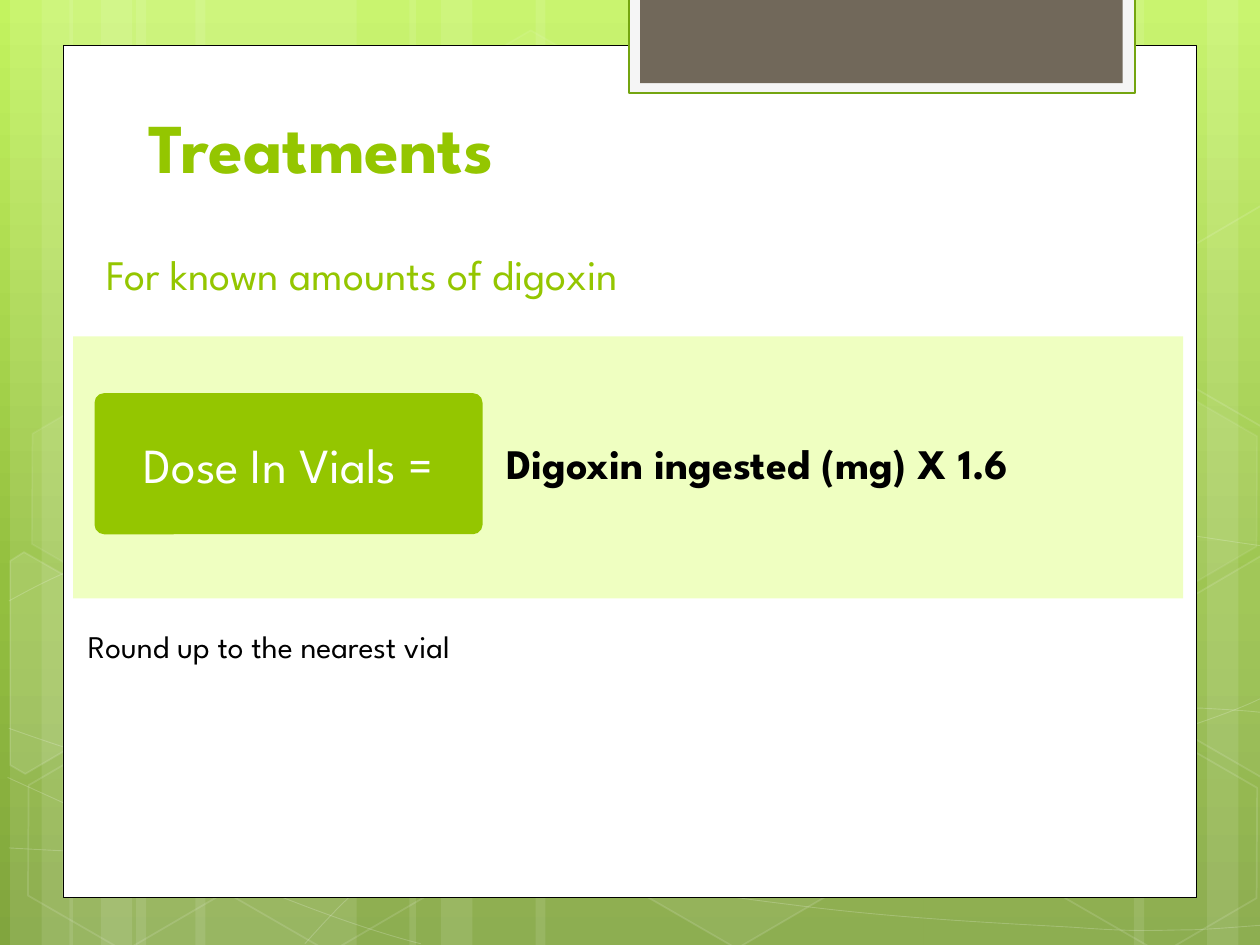
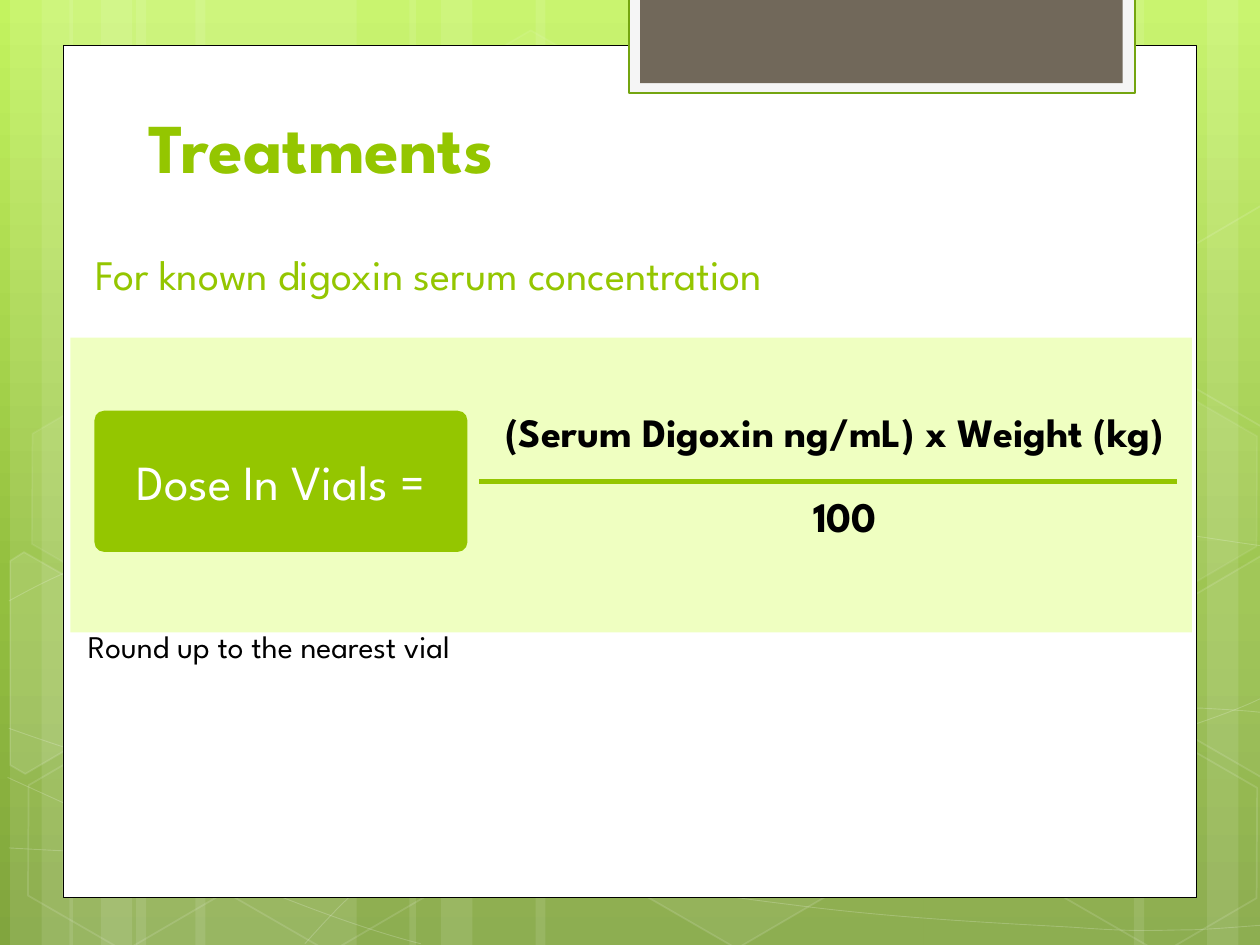
from copy import deepcopy
from math import cos, radians, sin
from pptx import Presentation
from pptx import util as u
from pptx.dml.color import RGBColor
from pptx.enum import shapes, text
from pptx.oxml.ns import qn
from pptx.oxml.xmlchemy import OxmlElement

UNIT = 2.54  # one layout unit in centimetres
TILT = 30  # turn of the hexagons, in degrees
FONT = "League Spartan"
HEX = {"white": "FFFFFF", "black": "000000", "green": "94C600",
       "pale": "EFFFC1", "rim": "74A510", "tab": "71685A",
       "frame": "F5F5F5"}
SKY = [(0, "C3F35F"), (0.62, "93BF3F"), (1, "81A53E")]

KIND = shapes.MSO_SHAPE
ALIGN = text.PP_ALIGN
MID = text.MSO_ANCHOR.MIDDLE

# Each formula part: text, box, format
SLIDES = [
    {"lead": ("For known amounts of digoxin", (0.75, 1.92, 7.5, 0.5)),
     "band": (0.58, 2.67, 8.81, 2.08),
     "dose": (0.75, 3.12, 3.08, 1.12),
     "parts": [("Digoxin ingested (mg) X 1.6", (3.92, 3.33, 5.33, 0.74),
                {"size": 24})]},
    {"lead": ("For known digoxin serum concentration",
              (0.66, 1.92, 8.84, 0.5)),
     "band": (0.56, 2.68, 8.9, 2.34),
     "dose": (0.75, 3.26, 2.96, 1.12),
     "parts": [("(Serum Digoxin ng/mL) x Weight (kg)",
                (3.58, 3.08, 6.1, 0.74),
                {"size": 23, "align": ALIGN.CENTER}),
               ("100", (4.07, 3.75, 5.27, 0.74),
                {"size": 24, "align": ALIGN.CENTER})],
     "bar": (3.8, 3.82, 9.34, 3.82)},
]

# Stripes: left, width
STRIPES = [(1.08, 1.75), (0.08, 0.5), (0.33, 0.83), (1.55, 1.75),
           (0.55, 0.5), (0.8, 0.83), (7.33, 1.75), (9.58, 0.5),
           (9, 0.83), (4.25, 3.08), (3.25, 0.5), (3.5, 0.83)]

# Curves: a start, then two handles and an end for each bend
CURVES = [
    [(0.07, 6.73), (0.61, 6.76), (1.15, 6.79), (1.9, 6.78),
     (2.65, 6.77), (3.58, 6.75), (4.58, 6.65),
     (5.58, 6.55), (7, 6.36), (7.92, 6.17),
     (8.83, 5.98), (9.77, 5.68), (10.07, 5.51)],
    [(0.07, 4.77), (0.36, 4.61), (0.65, 4.46), (1.21, 4.31),
     (1.78, 4.16), (2.59, 3.94), (3.47, 3.87),
     (4.36, 3.8), (5.44, 3.79), (6.54, 3.87),
     (7.64, 3.95), (9.47, 4.26), (10.07, 4.34)],
    [(0.06, 6.17), (1.27, 6.72), (2.47, 7.27), (3.34, 7.49)],
    [(0.07, 5.78), (0.38, 5.89), (0.7, 6), (1.28, 6.16),
     (1.86, 6.31), (2.73, 6.56), (3.57, 6.73),
     (4.4, 6.9), (5.45, 7.08), (6.28, 7.18),
     (7.11, 7.29), (8, 7.33), (8.53, 7.36),
     (9.05, 7.4), (9.19, 7.38), (9.45, 7.38),
     (9.71, 7.37), (9.89, 7.35), (10.07, 7.34)],
    [(2.42, 7.49), (2.6, 7.29), (2.78, 7.09), (3.02, 6.91),
     (3.26, 6.73), (3.6, 6.53), (3.88, 6.39),
     (4.16, 6.25), (4.33, 6.19), (4.7, 6.09),
     (5.06, 5.99), (5.73, 5.85), (6.08, 5.78),
     (6.44, 5.71), (6.49, 5.71), (6.8, 5.69),
     (7.11, 5.66), (7.6, 5.63), (7.94, 5.62),
     (8.29, 5.61), (8.86, 5.62), (8.86, 5.62),
     (8.86, 5.62), (9.53, 5.62), (9.53, 5.62),
     (9.71, 5.63), (9.88, 5.64), (9.97, 5.65),
     (10.06, 5.66), (10.03, 5.65), (10.06, 5.66)],
]

# Hexagons: left, top, fill opacity, line opacity
CELLS = [(3.34, 0.36, 4, 8), (4.97, 5.89, 6, 12), (0.11, 5.91, 0, 12),
         (0.14, 3.12, 7, 8), (1.74, 5.92, 0, 12), (7.53, 4.53, 10, 12),
         (8.34, 5.93, 0, 12), (8.34, 3.14, 7, 8)]

# Hexagons cut by the slide edge: fill opacity, centre, corners
CUTS = [
    (10, (0.36, 5.35), [(0.08, 4.45), (0.19, 4.38), (0.96, 4.82),
                        (0.95, 5.7), (0.2, 6.14), (0.08, 6.07)]),
    (4, (9.85, 5.2), [(9.26, 4.85), (10.01, 4.41), (10.09, 4.46),
                      (10.09, 6.13), (10.02, 6.17), (9.26, 5.73)]),
    (0, (9.85, 2.41), [(9.26, 2.07), (10.01, 1.63), (10.1, 1.68),
                       (10.09, 3.35), (10.02, 3.39), (9.26, 2.95)]),
]


def rgb(name):
    return RGBColor.from_string(HEX[name])


def dist(vals):
    return [u.Cm(v * UNIT) for v in vals]


def fade(node, alpha):
    """Set the opacity, in percent, of the solid fill under node."""
    tag = OxmlElement("a:alpha")
    tag.set("val", str(alpha * 1000))
    node.find(qn("a:solidFill"))[0].append(tag)


def paint(shp, fill=None, line=None, width=1, see=100, dim=100):
    """Fill and outline; see and dim are their opacities in percent."""
    shp.shadow.inherit = False
    props = shp.element.spPr
    if fill and see:
        shp.fill.solid()
        shp.fill.fore_color.rgb = rgb(fill)
        if see < 100:
            fade(props, see)
    else:
        shp.fill.background()
    if line:
        shp.line.color.rgb = rgb(line)
        shp.line.width = u.Pt(width)
        if dim < 100:
            fade(props.find(qn("a:ln")), dim)
    else:
        shp.line.fill.background()
    return shp


def block(page, box, kind=KIND.RECTANGLE, **look):
    return paint(page.shapes.add_shape(kind, *dist(box)), **look)


def trace(page, pts, close, **look):
    pts = [dist(p) for p in pts]
    pen = page.shapes.build_freeform(*pts[0])
    pen.add_line_segments(pts[1:], close=close)
    return paint(pen.convert_to_shape(), **look)


def bend(shp):
    """Turn each three line segments of a freeform into one cubic curve."""
    legs = list(shp.element.iter(qn("a:lnTo")))
    for i in range(0, len(legs), 3):
        curve = OxmlElement("a:cubicBezTo")
        legs[i].addprevious(curve)
        for leg in legs[i:i + 3]:
            curve.append(leg[0])
            leg.getparent().remove(leg)


def turn(pts, mid):
    """Points turned back by the tilt about mid."""
    c, s = cos(radians(TILT)), sin(radians(TILT))
    gaps = [(x - mid[0], y - mid[1]) for x, y in pts]
    return [(mid[0] + x * c + y * s, mid[1] + y * c - x * s)
            for x, y in gaps]


def write(page, words, box, shp=None, size=24, color="black", bold=False,
          align=ALIGN.LEFT, anchor=text.MSO_ANCHOR.TOP, wrap=True,
          grow=False, space=None):
    shp = shp or page.shapes.add_textbox(*dist(box))
    frame = shp.text_frame
    frame.word_wrap = wrap
    frame.vertical_anchor = anchor
    if grow:
        frame.auto_size = text.MSO_AUTO_SIZE.SHAPE_TO_FIT_TEXT
    para = frame.paragraphs[0]
    para.alignment = align
    para.line_spacing = space
    run = para.add_run()
    run.text = words
    run.font.name, run.font.size, run.font.bold = FONT, u.Pt(size), bold
    run.font.color.rgb = rgb(color)


def backdrop(page):
    fill = page.background.fill
    fill.gradient()
    fill.gradient_angle = 270
    stops = page.element.find(".//" + qn("a:gsLst"))
    stops.append(deepcopy(stops[-1]))
    for stop, (pos, tone) in zip(fill.gradient_stops, SKY):
        stop.position = pos
        stop.color.rgb = RGBColor.from_string(tone)
    for left, wide in STRIPES:
        block(page, (left, 0, wide, 7.5), fill="white", see=10)
    for pts in CURVES:
        bend(trace(page, pts, False, line="white", width=0.5, dim=20))
    for left, top, see, dim in CELLS:
        cell = block(page, (left, top, 1.75, 1.52), KIND.HEXAGON,
                     fill="white", see=see, line="white", dim=dim)
        cell.adjustments[0], cell.adjustments[1] = 0.285, 1.155
        cell.rotation = TILT
    for see, mid, pts in CUTS:
        cut = trace(page, turn(pts, mid), True, fill="white", see=see,
                    line="white", dim=12)
        cut.rotation = TILT
    block(page, (0.5, 0.36, 9, 6.76), fill="white", line="black", width=0.5)
    block(page, (4.99, -0.02, 4.02, 0.76), fill="frame", line="rim",
          width=1.25)
    block(page, (5.08, -0.02, 3.83, 0.68), fill="tab")


def build(page, data):
    backdrop(page)
    write(page, "Treatments", (1.08, 0.5, 7.68, 1.04), size=40,
          color="green", bold=True, anchor=text.MSO_ANCHOR.BOTTOM)
    write(page, "Round up to the nearest vial", (0.6, 4.93, 3.73, 0.4),
          size=18, wrap=False, grow=True)
    block(page, data["band"], fill="pale")
    write(page, *data["lead"], color="green", grow=True)
    for words, box, look in data["parts"]:
        write(page, words, box, bold=True, anchor=MID, space=0.9, **look)
    dose = block(page, data["dose"], KIND.ROUNDED_RECTANGLE, fill="green")
    dose.adjustments[0] = 0.068
    write(page, "Dose In Vials =", None, dose, size=28, color="white",
          align=ALIGN.CENTER, anchor=MID)
    if "bar" in data:
        bar = page.shapes.add_connector(shapes.MSO_CONNECTOR.STRAIGHT,
                                        *dist(data["bar"]))
        bar.line.color.rgb = rgb("green")
        bar.line.width = u.Pt(3)
        bar.element.spPr.append(OxmlElement("a:effectLst"))


def main():
    deck = Presentation()
    deck.slide_width, deck.slide_height = dist((10, 7.5))
    for data in SLIDES:
        build(deck.slides.add_slide(deck.slide_layouts[6]), data)
    deck.save("out.pptx")


if __name__ == "__main__":
    main()
